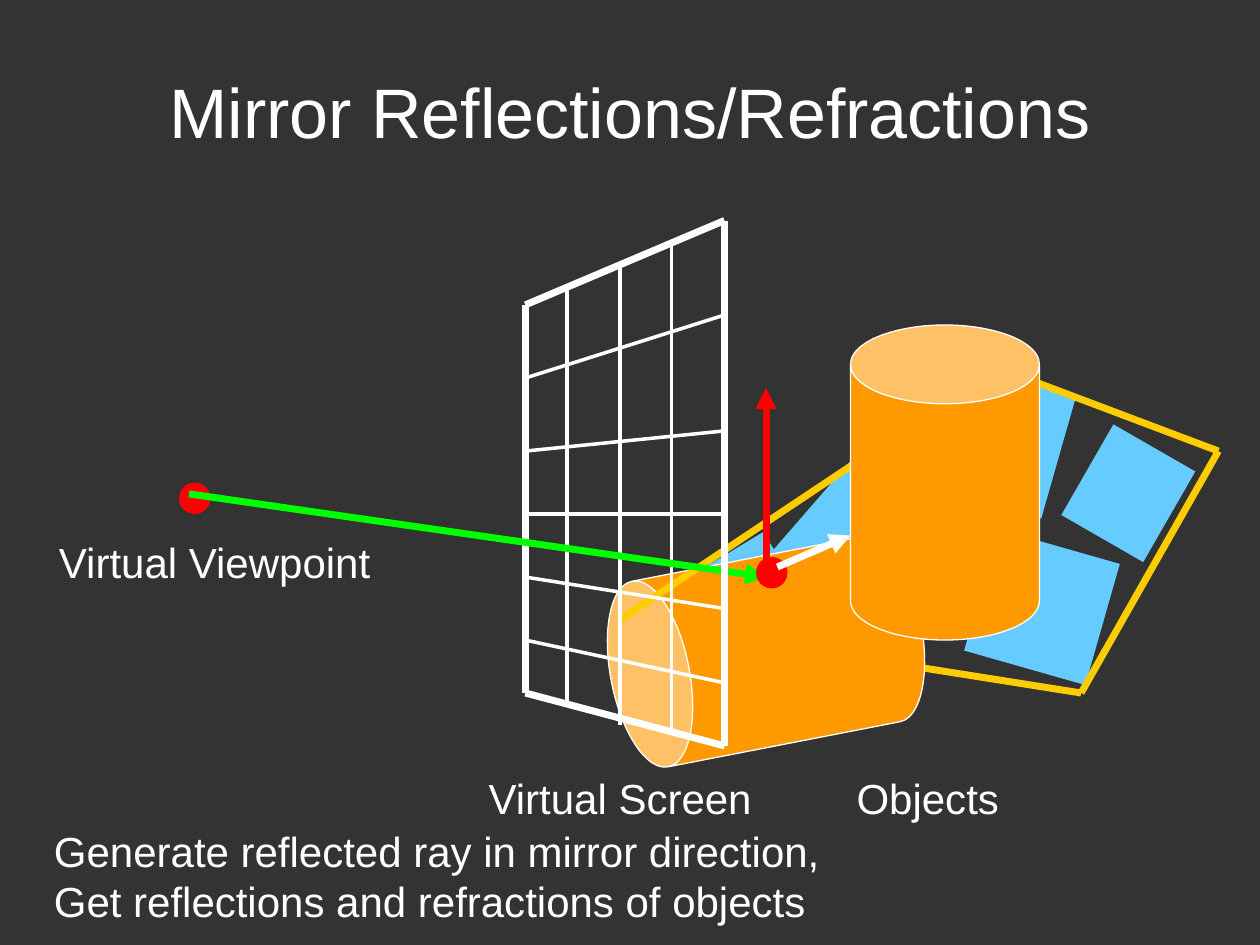
from lxml import etree
from pptx import Presentation
from pptx.dml.color import RGBColor
from pptx.enum.shapes import MSO_CONNECTOR, MSO_SHAPE
from pptx.enum.text import MSO_ANCHOR, MSO_AUTO_SIZE, PP_ALIGN
from pptx.oxml.ns import qn
from pptx.util import Inches, Pt

STRAIGHT = MSO_CONNECTOR.STRAIGHT
RECTANGLE, OVAL, CAN = MSO_SHAPE.RECTANGLE, MSO_SHAPE.OVAL, MSO_SHAPE.CAN
MIDDLE, TOP = MSO_ANCHOR.MIDDLE, MSO_ANCHOR.TOP
LEFT, CENTER = PP_ALIGN.LEFT, PP_ALIGN.CENTER

THEME = {
    "background": "333333", "white": "FFFFFF", "floor": "FFCC00",
    "tile": "66CCFF", "cylinder": "FF9900", "red": "FF0000", "ray": "00FF00",
    "font": "Arial", "title": 40, "body": 24,
    "thick": 4, "thin": 2, "outline": 0.75,
}

TITLE = ("Mirror Reflections/Refractions", (0.75, 0.42, 8.5, 0.92))
LABELS = [
    ("Virtual Viewpoint", (0.37, 4.21, 2.7, 0.5)),
    ("Virtual Screen", (3.78, 6.08, 2.31, 0.5)),
    ("Objects", (6.7, 6.08, 1.34, 0.5)),
]
EXPLANATION = (
    "Generate reflected ray in mirror direction,\n"
    "Get reflections and refractions of objects",
    (0.33, 6.5, 6.34, 0.91),
)

# Floor corners, and tiles as (box, rotation)
FLOOR_LEFT, FLOOR_BACK = (4.92, 4.92), (7.92, 2.92)
FLOOR_RIGHT, FLOOR_FRONT = (9.67, 3.58), (8.58, 5.5)
TILES_BEHIND = [((6.33, 3.83, 1, 1), 41), ((5.67, 4.33, 0.58, 0.58), 58.8)]
TILES_BESIDE = [
    ((7.42, 3, 1, 1), 15.9),
    ((7.77, 4.32, 1, 1), 15.9),
    ((8.58, 3.5, 0.75, 0.83), 29.9),
]
LYING_CYLINDER = ((5.33, 3.92, 1.5, 2.5), 259)
STANDING_CYLINDER = ((6.75, 2.58, 1.5, 2.5), 0)
CYLINDER_CAP = 0.41667

# Screen: outer edges, then (x, top, bottom) columns and (left y, right y) rows
SCREEN_LEFT, SCREEN_RIGHT = (4.17, 2.42, 5.5), (5.75, 1.75, 5.92)
SCREEN_COLUMNS = [(4.5, 2.25, 5.58), (4.92, 2.08, 5.75), (5.33, 1.92, 5.83)]
SCREEN_ROWS = [(3, 2.5), (3.58, 3.42), (4.08, 4.08), (4.58, 4.83), (5.08, 5.42)]

VIEWPOINT, HIT_POINT = (1.42, 3.83), (6, 4.42)
DOT_SIZE = 0.25
VIEW_RAY = ((1.5, 3.92), (6.08, 4.58))
SURFACE_NORMAL = ((6.08, 4.5), (6.08, 3.08))
REFLECTED_RAY = ((6.17, 4.5), (6.75, 4.25))


def color(name):
    return RGBColor.from_string(THEME[name])


def add_line(shapes, start, end, color_name, weight="thick", arrow=False):
    line = shapes.add_connector(STRAIGHT, *(Inches(v) for v in (*start, *end)))
    line.line.color.rgb = color(color_name)
    line.line.width = Pt(THEME[weight])
    if arrow:
        etree.SubElement(line.line._get_or_add_ln(), qn("a:tailEnd"), type="triangle")
    etree.SubElement(line._element.spPr, qn("a:effectLst"))


def add_solid(shapes, kind, box, fill, rotation=0, outlined=False):
    solid = shapes.add_shape(kind, *(Inches(v) for v in box))
    solid.shadow.inherit = False
    solid.rotation = rotation
    solid.fill.solid()
    solid.fill.fore_color.rgb = color(fill)
    if outlined:
        solid.line.color.rgb = color("white")
        solid.line.width = Pt(THEME["outline"])
    else:
        solid.line.fill.background()
    return solid


def add_tiles(shapes, tiles):
    for box, rotation in tiles:
        add_solid(shapes, RECTANGLE, box, "tile", rotation)


def add_cylinder(shapes, cylinder):
    box, rotation = cylinder
    solid = add_solid(shapes, CAN, box, "cylinder", rotation, outlined=True)
    solid.adjustments[0] = CYLINDER_CAP


def add_dot(shapes, corner):
    add_solid(shapes, OVAL, (*corner, DOT_SIZE, DOT_SIZE), "red")


def add_text(shapes, content, size="body", align=LEFT, anchor=TOP):
    text, box = content
    area = shapes.add_textbox(*(Inches(v) for v in box))
    frame = area.text_frame
    frame.text = text
    frame.vertical_anchor = anchor
    frame.word_wrap = size == "title"
    if size == "body":
        frame.auto_size = MSO_AUTO_SIZE.SHAPE_TO_FIT_TEXT
    for paragraph in frame.paragraphs:
        paragraph.alignment = align
        for run in paragraph.runs:
            run.font.name = THEME["font"]
            run.font.size = Pt(THEME[size])
            run.font.color.rgb = color("white")


def add_scene(shapes):
    add_line(shapes, FLOOR_LEFT, FLOOR_FRONT, "floor")
    add_tiles(shapes, TILES_BEHIND)
    add_cylinder(shapes, LYING_CYLINDER)
    add_tiles(shapes, TILES_BESIDE)
    for start, end in [(FLOOR_BACK, FLOOR_RIGHT), (FLOOR_LEFT, FLOOR_BACK),
                       (FLOOR_RIGHT, FLOOR_FRONT)]:
        add_line(shapes, start, end, "floor")


def add_screen(shapes):
    """Draw the screen except its right edge, which lies in front of the rays."""
    left, left_top, left_bottom = SCREEN_LEFT
    right, right_top, right_bottom = SCREEN_RIGHT
    for x, top, bottom in SCREEN_COLUMNS:
        add_line(shapes, (x, top), (x, bottom), "white", "thin")
    for left_y, right_y in SCREEN_ROWS:
        add_line(shapes, (left, left_y), (right, right_y), "white", "thin")
    add_line(shapes, (left, left_top), (left, left_bottom), "white")
    add_line(shapes, (left, left_top), (right, right_top), "white")
    add_line(shapes, (left, left_bottom), (right, right_bottom), "white")


def main():
    deck = Presentation()
    deck.slide_width, deck.slide_height = Inches(10), Inches(7.5)
    slide = deck.slides.add_slide(deck.slide_layouts[6])
    slide.background.fill.solid()
    slide.background.fill.fore_color.rgb = color("background")
    shapes = slide.shapes

    add_scene(shapes)
    add_text(shapes, TITLE, "title", CENTER, MIDDLE)
    add_screen(shapes)
    add_dot(shapes, VIEWPOINT)
    for label in LABELS:
        add_text(shapes, label)
    add_cylinder(shapes, STANDING_CYLINDER)

    hit = shapes.add_group_shape().shapes
    add_line(hit, *VIEW_RAY, "ray", arrow=True)
    add_dot(hit, HIT_POINT)
    add_line(hit, *SURFACE_NORMAL, "red", arrow=True)

    reflection = shapes.add_group_shape().shapes
    add_line(reflection, *REFLECTED_RAY, "white", arrow=True)
    add_text(reflection, EXPLANATION)

    x, top, bottom = SCREEN_RIGHT
    add_line(shapes, (x, top), (x, bottom), "white")
    deck.save("out.pptx")


if __name__ == "__main__":
    main()
